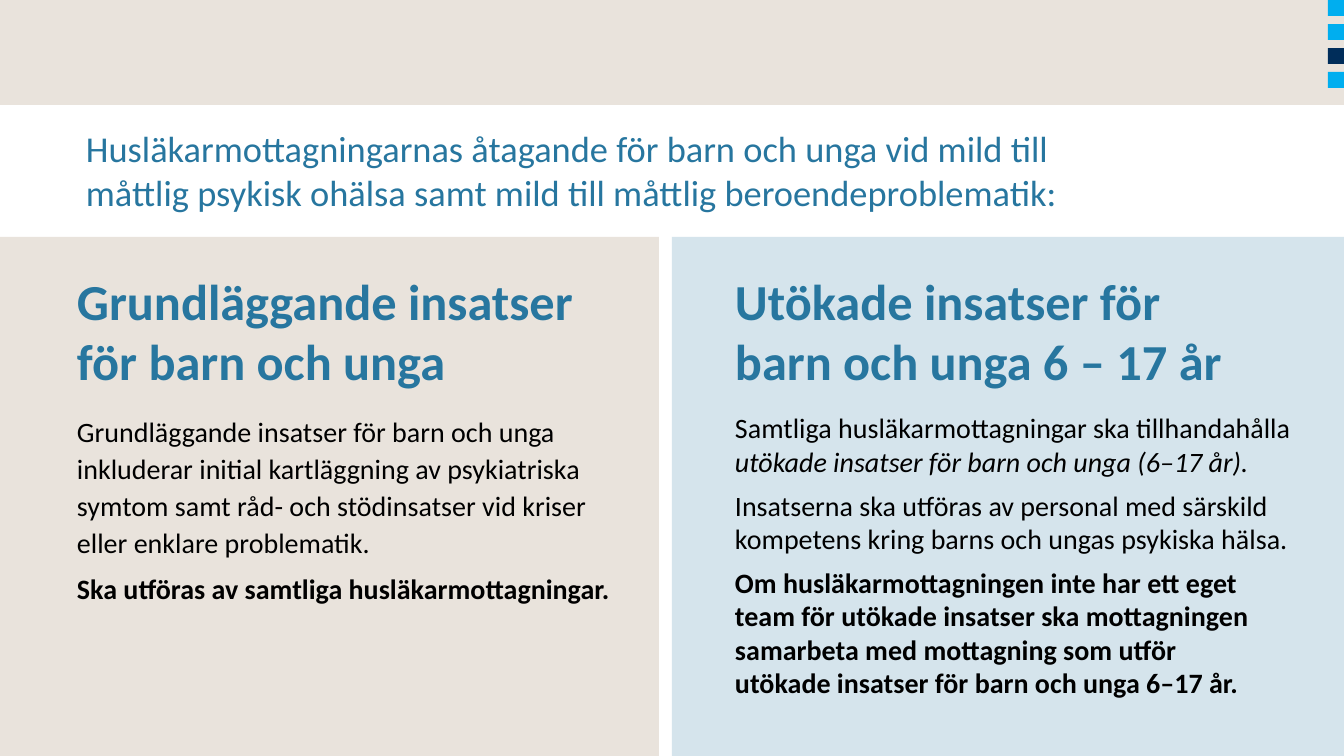
from pptx import Presentation, util as u
from pptx.dml.color import RGBColor
from pptx.enum import shapes, text

SAND = RGBColor(0xE9, 0xE3, 0xDC)
ICE = RGBColor(0xD5, 0xE4, 0xEC)
CYAN = RGBColor(0x00, 0xAE, 0xEF)
NAVY = RGBColor(0x00, 0x2D, 0x5A)
TEAL = RGBColor(0x27, 0x76, 0x9F)
BLACK = RGBColor(0x00, 0x00, 0x00)

WIDTH, HEIGHT = 1344, 756


def px(n):
    return u.Emu(round(n * 914400 / 100.8))


class SlideBuilder:
    font = "Calibri"

    def __init__(self, slide):
        self.slide = slide

    def block(self, x, y, w, h, color):
        shape = self.slide.shapes.add_shape(
            shapes.MSO_SHAPE.RECTANGLE, px(x), px(y), px(w), px(h))
        shape.shadow.inherit = False
        shape.fill.solid()
        shape.fill.fore_color.rgb = color
        shape.line.fill.background()

    def copy(self, x, y, w, h, paragraphs, size, color, leading=None):
        """Each paragraph is a list of (text, style) runs; style is "", "b" or "i"."""
        frame = self.slide.shapes.add_textbox(px(x), px(y), px(w), px(h)).text_frame
        frame.word_wrap = True
        frame.vertical_anchor = text.MSO_ANCHOR.TOP
        frame.margin_left = frame.margin_right = 0
        frame.margin_top = frame.margin_bottom = 0
        for i, runs in enumerate(paragraphs):
            paragraph = frame.add_paragraph() if i else frame.paragraphs[0]
            paragraph.space_before = u.Pt(5 if i else 0)
            paragraph.space_after = u.Pt(2)
            if leading:
                paragraph.line_spacing = u.Pt(leading)
            for words, style in runs:
                for j, line in enumerate(words.split("\n")):
                    if j:
                        paragraph.add_line_break()
                    self.run(paragraph, line, style, size, color)

    def run(self, paragraph, words, style, size, color):
        run = paragraph.add_run()
        run.text = words
        run.font.name = self.font
        run.font.size = u.Pt(size)
        run.font.bold = style == "b"
        run.font.italic = style == "i"
        run.font.color.rgb = color


def main():
    deck = Presentation()
    deck.slide_width, deck.slide_height = px(WIDTH), px(HEIGHT)
    page = SlideBuilder(deck.slides.add_slide(deck.slide_layouts[6]))

    # Top band with the colour marks
    page.block(0, 0, WIDTH, 105, SAND)
    for i, mark_color in enumerate((CYAN, CYAN, NAVY, CYAN)):
        page.block(WIDTH - 16, i * 24, 16, 16, mark_color)

    # Two panels
    panel_top = 237
    page.block(672, panel_top, 672, HEIGHT - panel_top, ICE)
    page.block(0, panel_top, 659, HEIGHT - panel_top, SAND)

    # Introduction
    page.copy(86, 126, 1190, 96, [[(
        "Husläkarmottagningarnas åtagande för barn och unga vid mild till\n"
        "måttlig psykisk ohälsa samt mild till måttlig beroendeproblematik:", "")]],
        26, TEAL)

    # Basic care
    page.copy(77, 270, 575, 128,
              [[("Grundläggande insatser\nför barn och unga", "b")]], 36, TEAL)
    page.copy(77, 411, 546, 318, [
        [("Grundläggande insatser för barn och unga inkluderar initial "
          "kartläggning av psykiatriska symtom samt råd- och stödinsatser "
          "vid kriser eller enklare problematik.", "")],
        [("Ska utföras av samtliga husläkarmottagningar.", "b")],
    ], 20, BLACK, leading=26.4)

    # Extended care
    page.copy(735, 270, 595, 128,
              [[("Utökade insatser för\nbarn och unga 6 – 17 år", "b")]], 36, TEAL)
    page.copy(735, 411, 585, 319, [
        [("Samtliga husläkarmottagningar ska tillhandahålla ", ""),
         ("utökade insatser för barn och unga (6–17 år).", "i")],
        [("Insatserna ska utföras av personal med särskild kompetens "
          "kring barns och ungas psykiska hälsa.", "")],
        [("Om husläkarmottagningen inte har ett eget\n"
          "team för utökade insatser ska mottagningen samarbeta med "
          "mottagning som utför\nutökade insatser för barn och unga 6–17 år.", "b")],
    ], 20, BLACK)

    deck.save("out.pptx")


if __name__ == "__main__":
    main()
